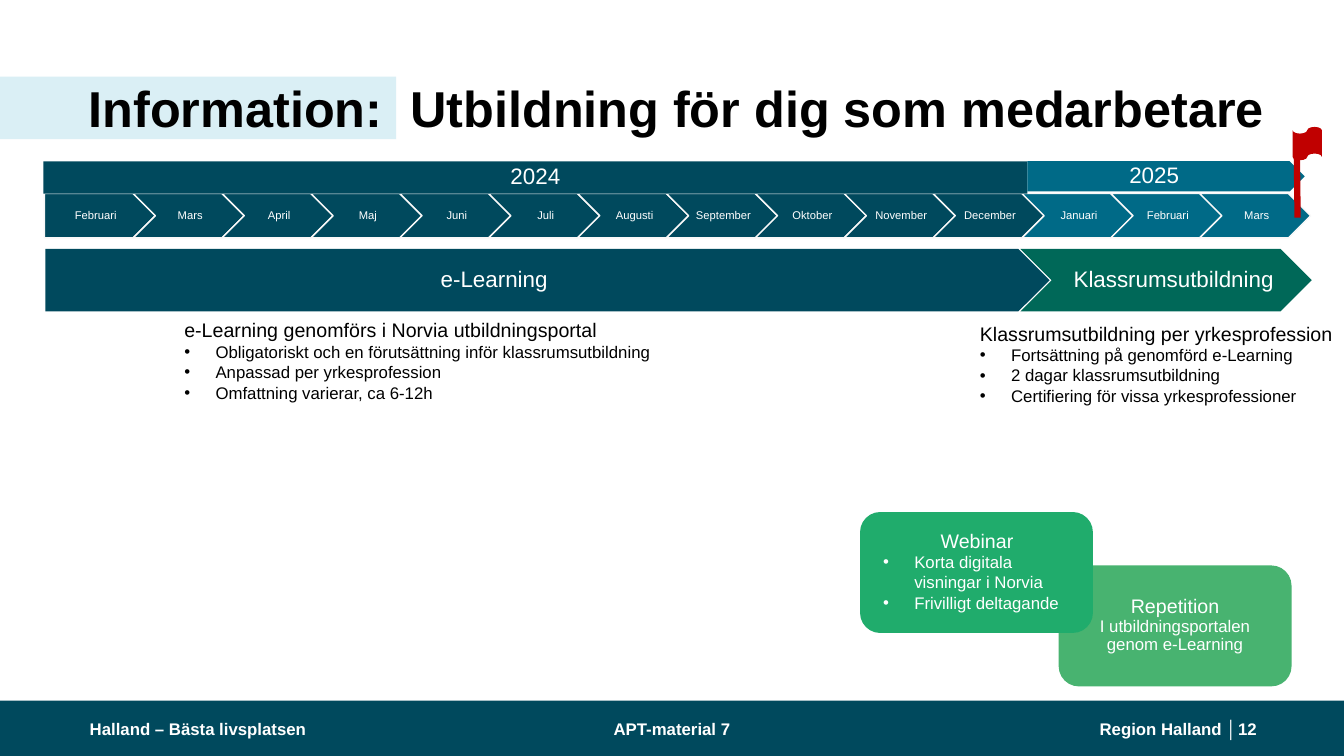
"""Build the training timeline slide for employees."""
from lxml import etree
from pptx import Presentation
from pptx.dml.color import RGBColor
from pptx.enum import shapes, text
from pptx.oxml.ns import qn
from pptx.util import Inches, Pt

NAVY = RGBColor(0x00, 0x49, 0x5D)
TEAL = RGBColor(0x00, 0x6A, 0x87)
PINE = RGBColor(0x00, 0x68, 0x58)
GREEN = RGBColor(0x20, 0xAC, 0x6C)
LIGHT_GREEN = RGBColor(0x48, 0xB3, 0x70)
PALE_BLUE = RGBColor(0xDA, 0xEF, 0xF5)
RED = RGBColor(0xC0, 0x00, 0x00)
OFF_WHITE = RGBColor(0xF8, 0xF8, 0xF8)
WHITE = RGBColor(0xFF, 0xFF, 0xFF)
BLACK = RGBColor(0x00, 0x00, 0x00)
KIND = shapes.MSO_SHAPE
LEFT, CENTER, RIGHT = text.PP_ALIGN.LEFT, text.PP_ALIGN.CENTER, text.PP_ALIGN.RIGHT
MIDDLE, TOP = text.MSO_ANCHOR.MIDDLE, text.MSO_ANCHOR.TOP

prs = Presentation()
prs.slide_width, prs.slide_height = Inches(13.33), Inches(7.5)
s = prs.slides.add_slide(prs.slide_layouts[5])


def add_block(kind, box, fill):
    sp = s.shapes.add_shape(kind, *map(Inches, box))
    sp.shadow.inherit = False
    sp.fill.solid()
    sp.fill.fore_color.rgb = fill
    sp.line.fill.background()
    return sp


def write(sp, lines, color, align=CENTER, insets=(0, 0, 0, 0), anchor=MIDDLE, bold=False, spacing=1.0):
    tf = sp.text_frame
    tf.word_wrap = True
    tf.auto_size = text.MSO_AUTO_SIZE.NONE
    tf.vertical_anchor = anchor
    tf.margin_left, tf.margin_top, tf.margin_right, tf.margin_bottom = map(Inches, insets)
    for i, (words, size, bullet) in enumerate(lines):
        p = tf.add_paragraph() if i else tf.paragraphs[0]
        p.alignment = LEFT if bullet else align
        p.line_spacing = spacing if i or len(lines) == 1 else 1.0
        if bullet:
            pPr = p._p.get_or_add_pPr()
            pPr.set("marL", str(Inches(0.31)))
            pPr.set("indent", str(-Inches(0.31)))
            etree.SubElement(pPr, qn("a:buFont")).set("typeface", "Arial")
            etree.SubElement(pPr, qn("a:buChar")).set("char", "•")
        r = p.add_run()
        r.text = words
        r.font.name, r.font.size, r.font.bold = "Arial", Pt(size), bold
        r.font.color.rgb = color


add_block(KIND.RECTANGLE, (0, 6.95, 13.33, 0.55), NAVY)
add_block(KIND.RECTANGLE, (0, 0.76, 3.93, 0.62), PALE_BLUE)

title = s.shapes.title
title.left, title.top, title.width, title.height = map(Inches, (0.88, 0.36, 12.17, 1.42))
write(title, [("Information:  Utbildning för dig som medarbetare", 36, False)], BLACK, LEFT, bold=True)
title.element.getparent().append(title.element)

months = ["Februari", "Mars", "April", "Maj", "Juni", "Juli", "Augusti", "September",
          "Oktober", "November", "December", "Januari", "Februari", "Mars"]
for i, month in enumerate(months):
    kind = KIND.CHEVRON if i else KIND.PENTAGON
    sp = add_block(kind, (0.44 + i * 0.8815, 1.92, 1.1, 0.44), NAVY if i < 11 else TEAL)
    sp.line.color.rgb = OFF_WHITE
    sp.line.width = Pt(1)
    write(sp, [(month, 8, False)], WHITE, insets=(0.04, 0.02, 0.01, 0.02), spacing=0.9)

bars = [
    ("2024", KIND.RECTANGLE, (0.43, 1.6, 9.76, 0.32), NAVY, (0.03, 0.02, 0.03, 0.02)),
    ("2025", KIND.PENTAGON, (10.19, 1.6, 2.75, 0.3), TEAL, (0.1, 0, 0.26, 0)),
    ("e-Learning", KIND.PENTAGON, (0.45, 2.47, 9.96, 0.62), NAVY, (0.1, 0.05, 1, 0.05)),
    ("Klassrumsutbildning", KIND.CHEVRON, (10.12, 2.47, 2.89, 0.62), PINE, (0.15, 0.05, 0, 0.05)),
]
for label, kind, box, fill, insets in bars:
    sp = add_block(kind, box, fill)
    write(sp, [(label, 16, False)], WHITE, insets=insets, spacing=0.9)

details = [
    ((1.73, 3.11, 6.67, 0.94), "e-Learning genomförs i Norvia utbildningsportal",
     ["Obligatoriskt och en förutsättning inför klassrumsutbildning",
      "Anpassad per yrkesprofession", "Omfattning varierar, ca 6-12h"]),
    ((9.62, 3.14, 3.71, 0.94), "Klassrumsutbildning per yrkesprofession",
     ["Fortsättning på genomförd e-Learning", "2 dagar klassrumsutbildning",
      "Certifiering för vissa yrkesprofessioner"]),
]
for box, heading, points in details:
    tb = s.shapes.add_textbox(*map(Inches, box))
    lines = [(heading, 14, False)] + [(point, 12, True) for point in points]
    write(tb, lines, BLACK, LEFT, (0.1, 0.05, 0.1, 0.05), TOP)

repetition = add_block(KIND.ROUNDED_RECTANGLE, (10.5, 5.61, 2.31, 1.2), LIGHT_GREEN)
write(repetition, [("Repetition", 14, False), ("I utbildningsportalen genom e-Learning", 12, False)],
      WHITE, insets=(0.28, 0.03, 0.28, 0.07), spacing=0.9)

webinar = add_block(KIND.ROUNDED_RECTANGLE, (8.53, 5.08, 2.31, 1.2), GREEN)
write(webinar, [("Webinar", 14, False), ("Korta digitala visningar i Norvia", 12, True),
                ("Frivilligt deltagande", 12, True)],
      WHITE, insets=(0.17, 0.03, 0.16, 0.07))

footers = [
    ("Halland – Bästa livsplatsen", 0.89, 4.5, LEFT),
    ("APT-material 7", 6.01, 1.31, CENTER),
    ("Region Halland │", 9.87, 2.4, RIGHT),
    ("12", 12.28, 0.24, LEFT),
]
for words, left, width, align in footers:
    tb = s.shapes.add_textbox(Inches(left), Inches(7.06), Inches(width), Inches(0.35))
    write(tb, [(words, 12, False)], WHITE, align, bold=True)

pole = s.shapes.add_connector(shapes.MSO_CONNECTOR.STRAIGHT,
                              Inches(12.86), Inches(1.33), Inches(12.87), Inches(2.16))
pole.line.color.rgb = RED
pole.line.width = Pt(4.5)
etree.SubElement(pole._element.spPr, qn("a:effectLst"))
add_block(KIND.FLOWCHART_PUNCHED_TAPE, (12.82, 1.26, 0.29, 0.33), RED)

prs.save("out.pptx")
